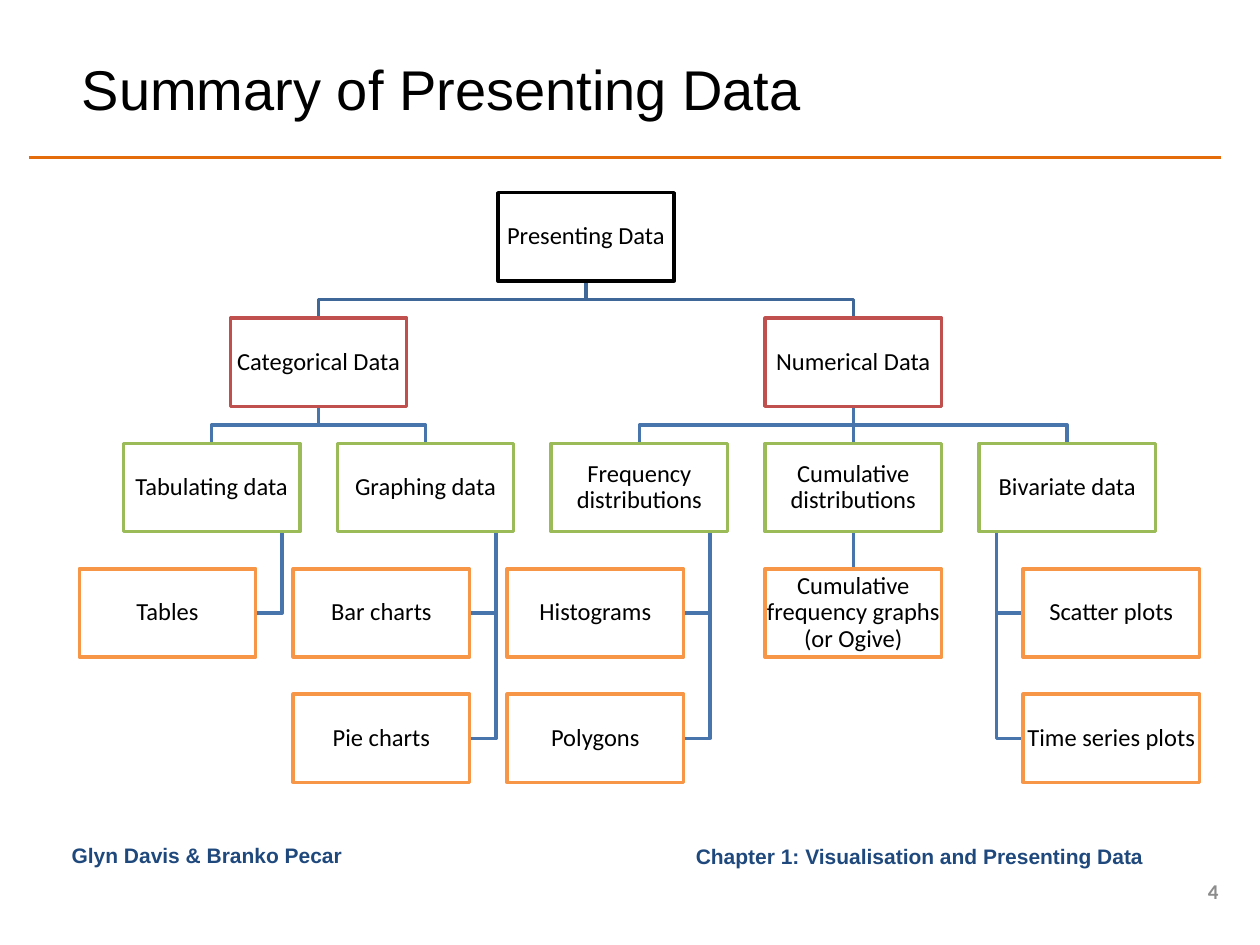
import pptx
import pptx.util
import pptx.dml.color
import pptx.enum.shapes
import pptx.enum.text
from lxml import etree

Inches, Pt = pptx.util.Inches, pptx.util.Pt
ALIGN, ANCHOR = pptx.enum.text.PP_ALIGN, pptx.enum.text.MSO_ANCHOR

TITLE = "Summary of Presenting Data"
# Text, left, top, width, height, alignment, anchor, font, colour
FOOTERS = [
    ("Chapter 1: Visualisation and Presenting Data ", 4.69, 6.64, 4.53, 0.31,
     ALIGN.RIGHT, ANCHOR.MIDDLE, "Arial", "navy"),
    ("4", 9.3, 6.95, 0.47, 0.24, ALIGN.RIGHT, ANCHOR.MIDDLE, "Calibri", "grey"),
    ("Glyn Davis & Branko Pecar", 0.47, 6.64, 2.97, 0.31,
     ALIGN.LEFT, ANCHOR.TOP, "Arial", "navy"),
]
ROOT = "Presenting Data"
# Branch -> topics; each topic has the side its leaves hang on (-1, 0, 1)
BRANCHES = {
    "Categorical Data": [
        ("Tabulating data", -1, ["Tables"]),
        ("Graphing data", -1, ["Bar charts", "Pie charts"]),
    ],
    "Numerical Data": [
        ("Frequency distributions", -1, ["Histograms", "Polygons"]),
        ("Cumulative distributions", 0, ["Cumulative frequency graphs (or Ogive)"]),
        ("Bivariate data", 1, ["Scatter plots", "Time series plots"]),
    ],
}
COLOURS = {
    "black": "000000", "white": "FFFFFF", "navy": "1F497D", "grey": "8C8C8C",
    "rule": "E46C0A", "root": "000000", "branch": "C0504D", "topic": "9BBB59",
    "leaf": "F79646", "root link": "3F6797", "link": "4875AC",
}

BOX_W, BOX_H = 1.4, 0.7
FIRST_X, COLUMN = 1.68, (8.47 - 1.68) / 4   # column centres
FIRST_Y, ROW = 1.53, (5.51 - 1.53) / 4      # row tops
LEAF_SHIFT, TRUNK_SHIFT = BOX_W / 4, BOX_W * 0.4


def rgb(name):
    return pptx.dml.color.RGBColor.from_string(COLOURS[name])


def row_top(row):
    return FIRST_Y + row * ROW


def style_text(frame, text, font, size, colour, align, bold=False):
    frame.word_wrap = True
    frame.text = text
    paragraph = frame.paragraphs[0]
    paragraph.alignment = align
    paragraph.font.name, paragraph.font.size = font, Pt(size)
    paragraph.font.bold = bold
    paragraph.font.color.rgb = rgb(colour)
    return paragraph


def add_line(slide, start, end, colour, width=2):
    line = slide.shapes.add_connector(
        pptx.enum.shapes.MSO_CONNECTOR.STRAIGHT, *map(Inches, start + end))
    line.line.color.rgb, line.line.width = rgb(colour), Pt(width)
    properties = line.line._get_or_add_ln().getparent()
    etree.SubElement(properties, pptx.oxml.ns.qn("a:effectLst"))


def add_link(slide, points, colour):
    """Draw an open bent line, or a straight one when it has no bend."""
    if len({x for x, _ in points}) == 1:
        add_line(slide, points[0], points[-1], colour)
        return
    # Freeform points are rounded to whole units, so they are given in EMU
    corners = [(Inches(x), Inches(y)) for x, y in points]
    builder = slide.shapes.build_freeform(*corners[0])
    builder.add_line_segments(corners[1:], close=False)
    link = builder.convert_to_shape()
    link.fill.background()
    link.shadow.inherit = False
    link.line.color.rgb, link.line.width = rgb(colour), Pt(2)


def link_down(slide, parent_x, child_x, row, colour="link"):
    """Link a box in this row to one below it, turning midway in the gap."""
    start, end = row_top(row) + BOX_H, row_top(row + 1)
    middle = (start + end) / 2
    add_link(slide, [(parent_x, start), (parent_x, middle),
                     (child_x, middle), (child_x, end)], colour)


def link_leaf(slide, topic_x, side, row):
    if side == 0:
        link_down(slide, topic_x, topic_x, row - 1)
        return
    trunk_x = topic_x - side * TRUNK_SHIFT
    edge_x = topic_x + side * (LEAF_SHIFT - BOX_W / 2)
    middle = row_top(row) + BOX_H / 2
    add_link(slide, [(trunk_x, row_top(2) + BOX_H), (trunk_x, middle),
                     (edge_x, middle)], "link")


def add_box(slide, text, centre_x, row, level):
    box = slide.shapes.add_shape(
        pptx.enum.shapes.MSO_SHAPE.RECTANGLE, Inches(centre_x - BOX_W / 2),
        Inches(row_top(row)), Inches(BOX_W), Inches(BOX_H))
    box.shadow.inherit = False
    box.fill.solid()
    box.fill.fore_color.rgb = rgb("white")
    box.line.color.rgb, box.line.width = rgb(level), Pt(2)
    frame = box.text_frame
    frame.margin_left = frame.margin_right = Inches(0.01)
    frame.margin_top = frame.margin_bottom = Inches(0.01)
    frame.vertical_anchor = ANCHOR.MIDDLE
    label = style_text(frame, text, "Calibri", 14, "black", ALIGN.CENTER)
    label.line_spacing = 0.9


def add_tree(slide):
    boxes, branch_centres, column = [], [], 0
    for branch, topics in BRANCHES.items():
        centres = [FIRST_X + (column + i) * COLUMN for i in range(len(topics))]
        column += len(topics)
        # The middle topic sits exactly below its branch when the count is odd
        branch_x = (centres[(len(centres) - 1) // 2] + centres[len(centres) // 2]) / 2
        branch_centres.append(branch_x)
        boxes.append((branch, branch_x, 1, "branch"))
        for topic_x, (topic, side, leaves) in zip(centres, topics):
            link_down(slide, branch_x, topic_x, 1)
            boxes.append((topic, topic_x, 2, "topic"))
            for row, leaf in enumerate(leaves, start=3):
                link_leaf(slide, topic_x, side, row)
                boxes.append((leaf, topic_x + side * LEAF_SHIFT, row, "leaf"))
    root_x = sum(branch_centres) / len(branch_centres)
    for branch_x in branch_centres:
        link_down(slide, root_x, branch_x, 0, "root link")
    for box in [(ROOT, root_x, 0, "root")] + boxes:
        add_box(slide, *box)


def main():
    deck = pptx.Presentation()
    deck.slide_width, deck.slide_height = Inches(10), Inches(7.5)
    slide = deck.slides.add_slide(deck.slide_layouts.get_by_name("Title Only"))

    title = slide.shapes.title
    title.left, title.top = Inches(0.55), Inches(0.31)
    title.width, title.height = Inches(7.58), Inches(0.78)
    title.text_frame.vertical_anchor = ANCHOR.MIDDLE
    style_text(title.text_frame, TITLE, "Arial", 32, "black", ALIGN.LEFT)
    add_line(slide, (0.23, 1.25), (9.69, 1.25), "rule", 2.25)

    for text, left, top, width, height, align, anchor, font, colour in FOOTERS:
        footer = slide.shapes.add_textbox(*map(Inches, (left, top, width, height)))
        footer.text_frame.vertical_anchor = anchor
        style_text(footer.text_frame, text, font, 12, colour, align, bold=True)

    add_tree(slide)
    deck.save("out.pptx")


if __name__ == "__main__":
    main()
